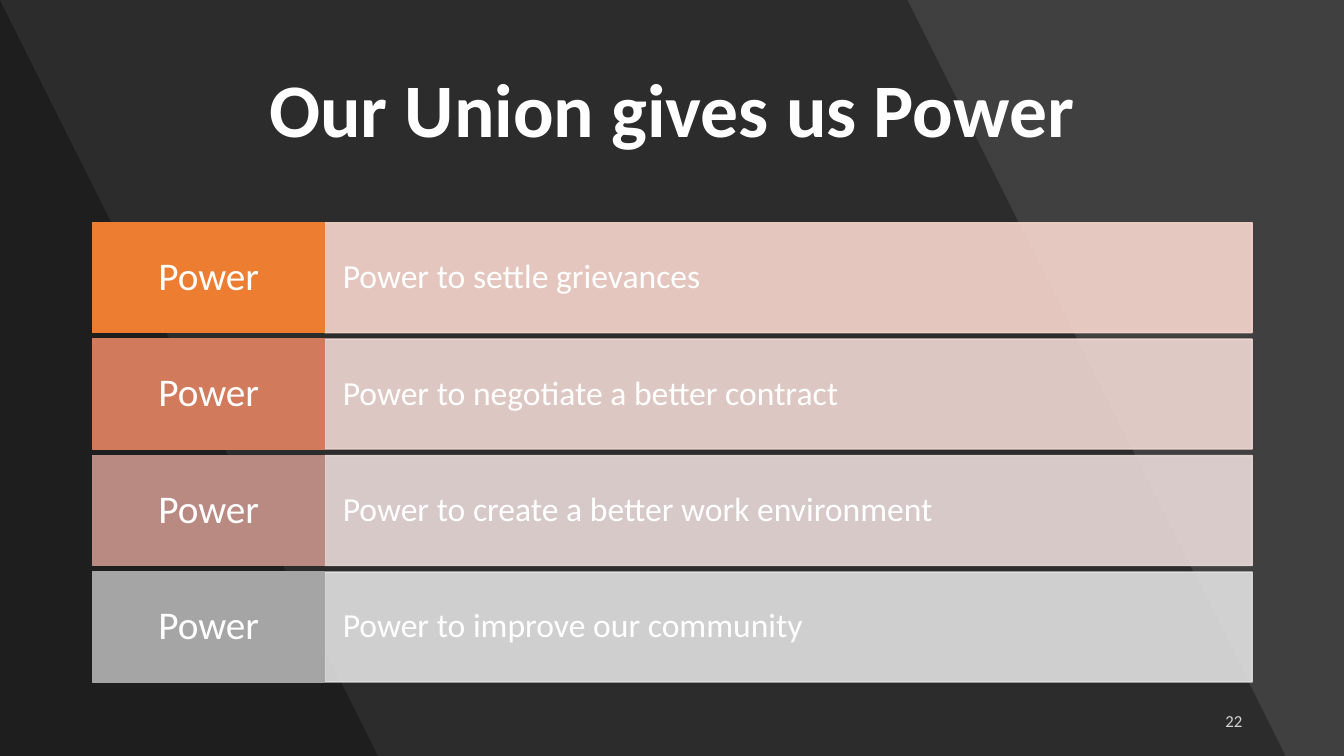
from dataclasses import dataclass

from lxml import etree
from pptx import Presentation
from pptx.dml.color import RGBColor
from pptx.dml.fill import FillFormat
from pptx.enum.shapes import MSO_SHAPE
from pptx.enum.text import MSO_ANCHOR, PP_ALIGN
from pptx.oxml.ns import qn
from pptx.shapes.autoshape import Shape
from pptx.slide import Slide
from pptx.util import Inches, Pt

RECTANGLE = MSO_SHAPE.RECTANGLE
MIDDLE = MSO_ANCHOR.MIDDLE
LEFT, CENTER, RIGHT = PP_ALIGN.LEFT, PP_ALIGN.CENTER, PP_ALIGN.RIGHT

FONT = "Calibri"
COLORS = {"background": "404040", "shade": "000000", "text": "FFFFFF"}
SLIDE_W, SLIDE_H = 13.33, 7.5
LABEL_LEFT, LABEL_W = 0.92, 2.3
BENEFIT_LEFT, BENEFIT_W = LABEL_LEFT + LABEL_W, 9.2
ROWS_TOP, ROW_H, ROW_PITCH = 2.21, 1.09, 1.155


@dataclass(frozen=True)
class PowerRow:
    benefit: str
    label_color: str
    benefit_color: str


@dataclass(frozen=True)
class Box:
    left: float
    top: float
    width: float
    height: float

    def emu(self) -> list[int]:
        return [Inches(v) for v in (self.left, self.top, self.width, self.height)]


@dataclass(frozen=True)
class TextStyle:
    size: float
    align: PP_ALIGN
    bold: bool = False
    opacity: int = 100
    line_spacing: float = 0.9
    inset_x: float = 0.1
    inset_y: float = 0.05


@dataclass(frozen=True)
class Shade:
    """A dark area from the left edge to a slanted right side."""
    top_x: float
    bottom_x: float


SHADES = [Shade(9.42, 12.89), Shade(0.44, 3.92)]
POWER_ROWS = [
    PowerRow("Power to settle grievances", "ED7D31", "F8D7CE"),
    PowerRow("Power to negotiate a better contract", "D17B5C", "F1D8D4"),
    PowerRow("Power to create a better work environment", "B98A82", "E9DBDA"),
    PowerRow("Power to improve our community", "A5A5A5", "E1E1E1"),
]
TITLE_STYLE = TextStyle(54, CENTER, bold=True)
LABEL_STYLE = TextStyle(28, CENTER, inset_x=0.12, inset_y=0.11)
BENEFIT_STYLE = TextStyle(24, LEFT, inset_x=0.18, inset_y=0.28)
NUMBER_STYLE = TextStyle(12, RIGHT, opacity=80, line_spacing=1.0)


def set_solid(fill: FillFormat, color: str, opacity: int = 100) -> None:
    fill.solid()
    fill.fore_color.rgb = RGBColor.from_string(color)
    if opacity < 100:
        # The colour element is reached through the public colour-format's parent XML.
        color_element = fill._xPr.find(qn("a:solidFill"))[0]
        etree.SubElement(color_element, qn("a:alpha")).set("val", str(opacity * 1000))


def write_text(shape: Shape, text: str, style: TextStyle) -> None:
    frame = shape.text_frame
    frame.text = text
    frame.word_wrap = True
    frame.vertical_anchor = MIDDLE
    frame.margin_left = frame.margin_right = Inches(style.inset_x)
    frame.margin_top = frame.margin_bottom = Inches(style.inset_y)
    paragraph = frame.paragraphs[0]
    paragraph.alignment = style.align
    paragraph.line_spacing = style.line_spacing
    font = paragraph.runs[0].font
    font.name, font.size, font.bold = FONT, Pt(style.size), style.bold
    set_solid(font.fill, COLORS["text"], style.opacity)


def add_shade(slide: Slide, shade: Shade) -> None:
    outline = slide.shapes.build_freeform(0, 0, scale=Inches(1))
    outline.add_line_segments(
        [(shade.top_x, 0), (shade.bottom_x, SLIDE_H), (0, SLIDE_H)], close=True
    )
    area = outline.convert_to_shape()
    area.shadow.inherit = False
    area.line.fill.background()
    set_solid(area.fill, COLORS["shade"], 30)


def add_text(slide: Slide, box: Box, text: str, style: TextStyle) -> None:
    write_text(slide.shapes.add_textbox(*box.emu()), text, style)


def add_bar(
    slide: Slide, box: Box, text: str, style: TextStyle, color: str, opacity: int = 100
) -> None:
    bar = slide.shapes.add_shape(RECTANGLE, *box.emu())
    bar.shadow.inherit = False
    set_solid(bar.fill, color, opacity)
    set_solid(bar.line.fill, color, opacity)
    bar.line.width = Pt(1)
    write_text(bar, text, style)


def add_power_row(slide: Slide, row: PowerRow, top: float) -> None:
    benefit_box = Box(BENEFIT_LEFT, top, BENEFIT_W, ROW_H)
    label_box = Box(LABEL_LEFT, top, LABEL_W, ROW_H)
    add_bar(slide, benefit_box, row.benefit, BENEFIT_STYLE, row.benefit_color, 90)
    add_bar(slide, label_box, "Power", LABEL_STYLE, row.label_color)


def main() -> None:
    deck = Presentation()
    deck.slide_width, deck.slide_height = Inches(SLIDE_W), Inches(SLIDE_H)
    slide = deck.slides.add_slide(deck.slide_layouts[6])
    set_solid(slide.background.fill, COLORS["background"])
    for shade in SHADES:
        add_shade(slide, shade)
    add_text(slide, Box(0.91, 0.4, 11.51, 1.45), "Our Union gives us Power", TITLE_STYLE)
    for index, row in enumerate(POWER_ROWS):
        add_power_row(slide, row, ROWS_TOP + index * ROW_PITCH)
    add_text(slide, Box(9.42, 6.95, 3, 0.4), "22", NUMBER_STYLE)
    deck.save("out.pptx")


if __name__ == "__main__":
    main()
